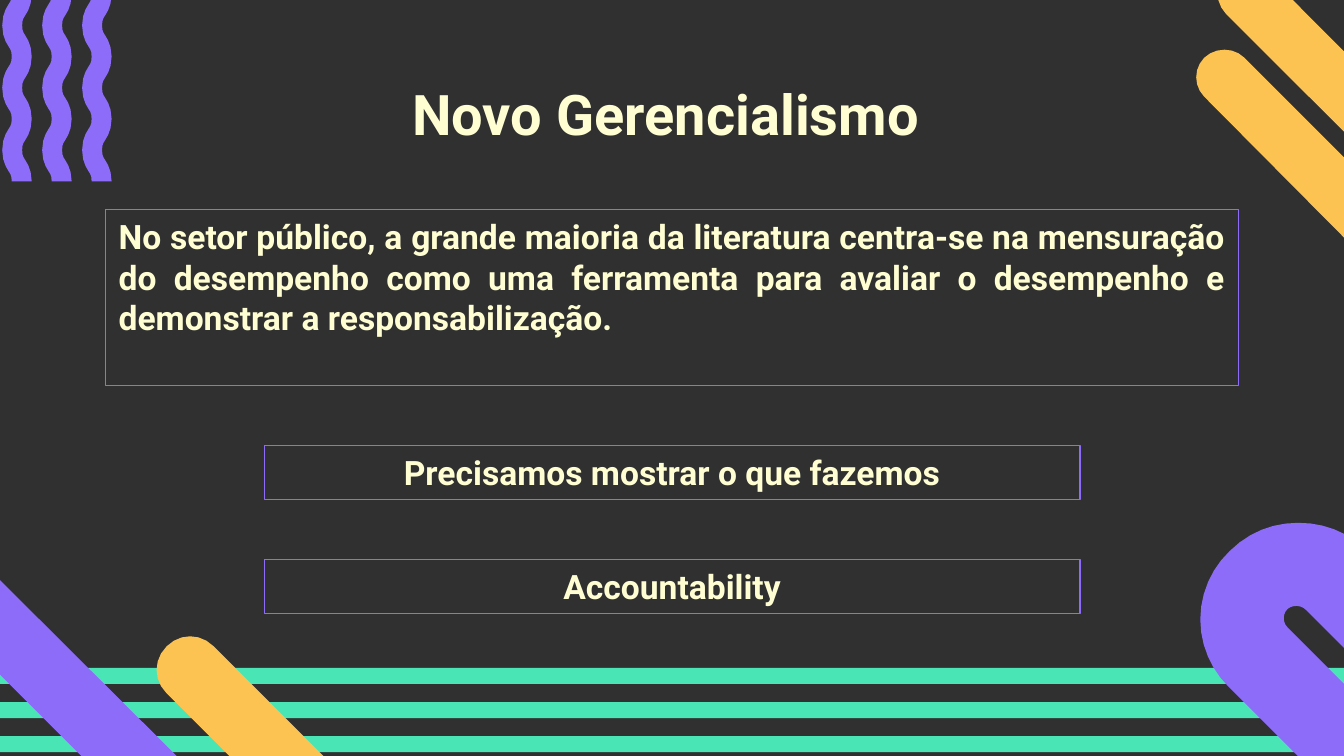
from pptx import Presentation
from pptx.dml.color import RGBColor
from pptx.enum import shapes, text
from pptx.util import Pt

COLORS = {"dark": "303030", "cream": "FFFED2", "purple": "8D6CFA",
          "yellow": "FCC353", "green": "49E5B5"}
FONT = "Roboto"

# Content: words, box (left, top, width, height), alignment
TITLE = ("Novo Gerencialismo", (56.9, 35.3, 607, 45.4))
BOXES = [
    ("No setor público, a grande maioria da literatura centra-se na mensuração "
     "do desempenho como uma ferramenta para avaliar o desempenho e demonstrar "
     "a responsabilização.", (56.5, 112.3, 607, 94.2), "JUSTIFY"),
    ("Precisamos mostrar o que fazemos", (141.6, 238.8, 437, 28.8), "CENTER"),
    ("Accountability", (141.6, 299.8, 437, 28.8), "CENTER"),
]

# Outlines: start point, then lines (2 numbers) and cubic curves (6 numbers)
OUTLINES = [
    ("yellow", [  # top right bars
        (678.2, -14.4), (750, 57.7), (750, 100.6), (656.6, 7.2),
        (650.9, 1.4, 650.9, -8.6, 656.6, -14.4),
        (662.4, -20.1, 672.4, -20.1, 678.2, -14.4)]),
    ("yellow", [
        (750, 157.5), (645.1, 51.8), (639.4, 46.1, 639.4, 36.7, 645.1, 31),
        (651, 25.2, 661, 25.2, 666.7, 31), (750, 114.3)]),
    ("purple", [  # bottom right hook
        (750, 459.8), (658.1, 367.9), (648.7, 358.6, 643, 345.6, 643, 331.9),
        (643, 318.2, 648.7, 304.6, 658.8, 295.2),
        (668.9, 285.1, 681.8, 280.1, 695.5, 280.1),
        (708.5, 280.1, 721.4, 284.4, 731.5, 294.5), (750, 313), (750, 377.1),
        (699.8, 326.9), (697, 324, 692.6, 324, 689.8, 326.2),
        (687, 329, 687, 333.4, 689.8, 336.2), (750, 396.4)]),
    ("purple", [  # bottom left bars
        (82.8, 444.2), (-65.5, 295.9), (-40.3, 270.7), (108, 418.3)]),
    ("yellow", [
        (157, 439.2), (89.3, 371.5), (82.1, 364.3, 82.1, 353.5, 89.3, 346.3),
        (96.5, 339.1, 107.3, 339.1, 114.5, 346.3), (182.2, 414)]),
]

# Wavy ribbons: one half wave of the left edge, repeated and mirrored
HALF_WAVE = [(5.1, 0), (5.1, 2.9, 4.6, 3.6, 3.3, 5.6), (1.9, 7.7, 0, 11.1, 0, 16.7)]
HALF_HEIGHT, HALVES, RIBBON_WIDTH = 16.7, 6, 15.8
RIBBON_LEFT, RIBBON_TOP, RIBBON_STEP, RIBBONS = 1.2, -3.1, 21.4, 3

# Stripes
STRIPE_LEFT, STRIPE_TOP, STRIPE_WIDTH, STRIPE_HEIGHT = -10.8, 357.8, 741.6, 8.6
STRIPE_STEP, STRIPES = 18.3, 3


def rgb(name):
    return RGBColor.from_string(COLORS[name])


def flatten(outline, steps):
    """Turn lines and cubic curves into a list of points."""
    points = [outline[0]]
    for seg in outline[1:]:
        if len(seg) == 2:
            points.append(seg)
            continue
        ctrl = [points[-1], seg[:2], seg[2:4], seg[4:]]
        for i in range(1, steps + 1):
            t = i / steps
            weights = ((1 - t) ** 3, 3 * t * (1 - t) ** 2, 3 * t * t * (1 - t), t ** 3)
            points.append(tuple(sum(w * c[axis] for w, c in zip(weights, ctrl))
                                for axis in (0, 1)))
    return points


def wave_edge(phase):
    half = flatten(HALF_WAVE, 3)
    flipped = [(x, HALF_HEIGHT - y) for x, y in reversed(half)]
    edge = [(flipped if phase else half)[0]]
    for k in range(HALVES):
        piece = flipped if (k + phase) % 2 else half
        edge += [(x, y + k * HALF_HEIGHT) for x, y in piece[1:]]
    return edge


def paint(sp, color):
    sp.shadow.inherit = False
    sp.fill.solid()
    sp.fill.fore_color.rgb = rgb(color)
    sp.line.fill.background()


def add_outline(slide, points, color):
    pts = [(Pt(x), Pt(y)) for x, y in points]
    fb = slide.shapes.build_freeform(*pts[0])
    fb.add_line_segments(pts[1:], close=True)
    paint(fb.convert_to_shape(), color)


def write(sp, words, size, align):
    tf = sp.text_frame
    tf.word_wrap = True
    tf.vertical_anchor = text.MSO_ANCHOR.TOP
    p = tf.paragraphs[0]
    p.text = words
    p.alignment = align
    p.font.name, p.font.size, p.font.bold = FONT, Pt(size), True
    p.font.color.rgb = rgb("cream")
    return tf


prs = Presentation()
prs.slide_width, prs.slide_height = Pt(720), Pt(405)
slide = prs.slides.add_slide(prs.slide_layouts[6])
slide.background.fill.solid()
slide.background.fill.fore_color.rgb = rgb("dark")

# Stripes along the bottom
for i in range(STRIPES):
    sp = slide.shapes.add_shape(
        shapes.MSO_SHAPE.RECTANGLE, Pt(STRIPE_LEFT), Pt(STRIPE_TOP + i * STRIPE_STEP),
        Pt(STRIPE_WIDTH), Pt(STRIPE_HEIGHT))
    paint(sp, "green")

# Wavy ribbons
right_edge = [(RIBBON_WIDTH - x, y) for x, y in wave_edge(1)]
ribbon = wave_edge(0) + right_edge[::-1]
for i in range(RIBBONS):
    left = RIBBON_LEFT + i * RIBBON_STEP
    add_outline(slide, [(x + left, y + RIBBON_TOP) for x, y in ribbon], "purple")

# Hook and diagonal bars
for color, outline in OUTLINES:
    add_outline(slide, flatten(outline, 6), color)

# Title, set slightly left of centre
words, box = TITLE
tf = write(slide.shapes.add_textbox(*map(Pt, box)), words, 30, text.PP_ALIGN.CENTER)
tf.margin_left = tf.margin_top = tf.margin_bottom = Pt(7.2)
tf.margin_right = Pt(14.7)

# Framed statements
for words, box, align in BOXES:
    sp = slide.shapes.add_shape(shapes.MSO_SHAPE.RECTANGLE, *map(Pt, box))
    sp.shadow.inherit = False
    sp.fill.background()
    sp.line.color.rgb = rgb("purple")
    sp.line.width = Pt(0.75)
    write(sp, words, 18, getattr(text.PP_ALIGN, align))

prs.save("out.pptx")
